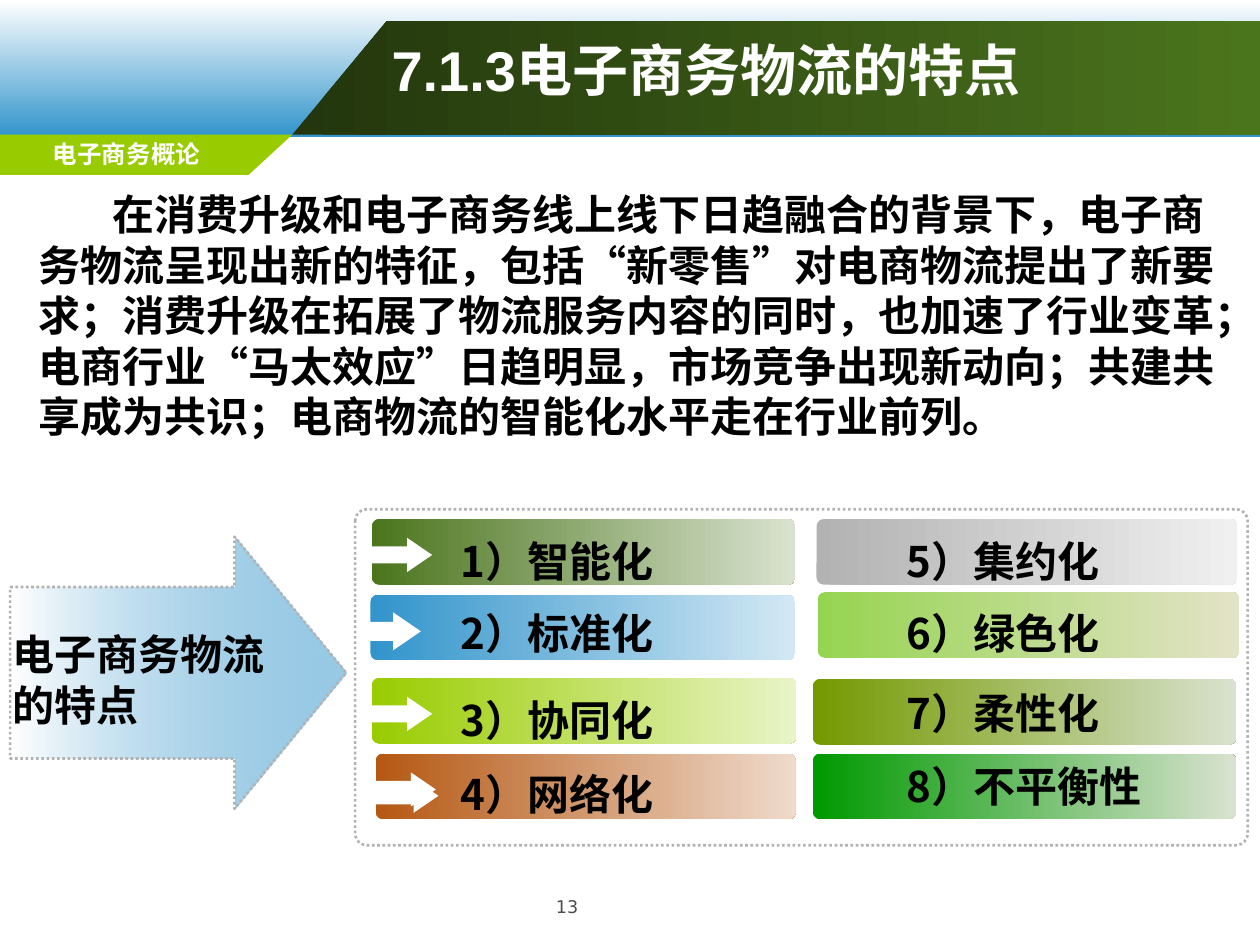
from dataclasses import dataclass

from lxml import etree
from pptx import Presentation
from pptx.dml.color import RGBColor
from pptx.enum.dml import MSO_LINE
from pptx.enum.shapes import MSO_SHAPE
from pptx.enum.text import PP_ALIGN
from pptx.oxml.ns import qn
from pptx.util import Pt

RECTANGLE = MSO_SHAPE.RECTANGLE
ROUNDED = MSO_SHAPE.ROUNDED_RECTANGLE
ARROW = MSO_SHAPE.RIGHT_ARROW
DOTTED = MSO_LINE.ROUND_DOT
LEFT, CENTER = PP_ALIGN.LEFT, PP_ALIGN.CENTER


@dataclass(frozen=True)
class Theme:
    white: str = "FFFFFF"
    black: str = "000000"
    gray: str = "4D4D4D"
    outline: str = "B2B2B2"
    blue: str = "3194CB"
    lime: str = "99CC00"
    banner: tuple = ("23360D", "4B751D")
    latin: str = "Arial"
    small_font: str = "DejaVu Sans"
    chinese: str = "Noto Sans CJK SC"
    title_size: int = 32
    body_size: int = 24
    course_size: int = 14
    number_size: int = 10


THEME = Theme()

BODY = (
    "在消费升级和电子商务线上线下日趋融合的背景下，电子商务物流呈现出新的特征，"
    "包括“新零售”对电商物流提出了新要求；消费升级在拓展了物流服务内容的同时，"
    "也加速了行业变革；电商行业“马太效应”日趋明显，市场竞争出现新动向；"
    "共建共享成为共识；电商物流的智能化水平走在行业前列。"
)

# Feature, gradient colours, bar box, label left and top
FEATURES = [
    ("1）智能化", ("4B751D", "D9E2CF"), (212.4, 296.6, 242, 37.5), (256.3, 302.4)),
    ("2）标准化", ("3194CB", "D3E8F4"), (211.7, 339.8, 242.6, 37.5), (256.3, 343.8)),
    ("3）协同化", ("99CC00", "E9F4C7"), (212.4, 387.4, 242.6, 37.5), (256.3, 393.1)),
    ("4）网络化", ("B55813", "EFDACB"), (214.6, 430.6, 240, 37.5), (256.3, 435.6)),
    ("5）集约化", ("B2B2B2", "F0F0F0"), (466.6, 296.6, 240.5, 37.5), (510.8, 302.4)),
    ("6）绿色化", ("95D450", "E3E3C7"), (467.3, 338.4, 241, 37.5), (511.2, 343.8)),
    ("7）柔性化", ("739900", "D9E2CF"), (464.4, 388, 242, 37.5), (511.2, 389.5)),
    ("8）不平衡性", ("009900", "D9E2CF"), (464.4, 430.6, 242, 37.5), (511.2, 431.3)),
]
POINTERS = [
    (208.1, 307.4, 38.9, 19.5),
    (208.1, 350, 32.4, 21.6),
    (208.1, 398.2, 38.9, 19.5),
    (210.2, 441.4, 38.9, 19.5),
    (211.7, 445, 38.9, 19.5),
]


def paint(shape, colors, angle=0, end_alpha=None):
    """Fill with one colour, a two-colour gradient, or nothing."""
    shape.shadow.inherit = False
    shape.line.fill.background()
    if colors is None:
        shape.fill.background()
    elif isinstance(colors, str):
        shape.fill.solid()
        shape.fill.fore_color.rgb = RGBColor.from_string(colors)
    else:
        shape.fill.gradient()
        shape.fill.gradient_angle = angle
        for stop, color in zip(shape.fill.gradient_stops, colors):
            stop.color.rgb = RGBColor.from_string(color)
        if end_alpha is not None:
            end_color = shape.fill._xPr.findall(".//" + qn("a:srgbClr"))[-1]
            etree.SubElement(end_color, qn("a:alpha"), val=str(end_alpha * 1000))


def add_block(page, kind, box, colors, adjustments=(), dotted=False, **fill):
    shape = page.shapes.add_shape(kind, *map(Pt, box))
    for index, value in enumerate(adjustments):
        shape.adjustments[index] = value
    paint(shape, colors, **fill)
    if dotted:
        shape.line.color.rgb = RGBColor.from_string(THEME.outline)
        shape.line.width = Pt(1.5)
        shape.line.dash_style = DOTTED


def add_outline(page, points, colors):
    builder = page.shapes.build_freeform(*points[0], scale=Pt(1))
    builder.add_line_segments(points[1:], close=True)
    paint(builder.convert_to_shape(), colors)


def add_text(page, box, text, size=THEME.body_size, font=THEME.latin,
             color=THEME.black, bold=True, align=LEFT, margin=0, indent=0):
    frame = page.shapes.add_textbox(*map(Pt, box)).text_frame
    frame.word_wrap = True
    for index, line in enumerate(text.split("\n")):
        para = frame.paragraphs[0] if index == 0 else frame.add_paragraph()
        para.alignment = align
        if margin or indent:
            properties = para._p.get_or_add_pPr()
            properties.set("marL", str(Pt(margin)))
            properties.set("indent", str(Pt(indent)))
        span = para.add_run()
        span.text = line
        span.font.size = Pt(size)
        span.font.bold = bold
        span.font.name = font
        span.font.color.rgb = RGBColor.from_string(color)
        etree.SubElement(span._r.get_or_add_rPr(), qn("a:ea"), typeface=THEME.chinese)


def add_header(page):
    add_block(page, RECTANGLE, (0, 0, 720, 78.5), (THEME.white, THEME.blue), angle=270)
    add_outline(page, [(167, 77), (720, 77), (720, 12), (221, 12)], THEME.banner)
    add_outline(page, [(0, 77), (167, 77), (142.5, 100), (0, 100)], THEME.lime)
    add_text(page, (2.9, 75.6, 139, 22.3), "电子商务概论", size=THEME.course_size,
             font=THEME.small_font, color=THEME.white, align=CENTER)
    add_text(page, (216.7, 16.6, 462, 46), "7.1.3电子商务物流的特点",
             size=THEME.title_size, color=THEME.white)


def add_features(page):
    add_block(page, ROUNDED, (203, 291, 510, 192), None, [0.035], dotted=True)
    for text, colors, bar, (left, top) in FEATURES:
        add_block(page, ROUNDED, bar, colors, [0.11])
        add_text(page, (left, top, 200, 36.5), text, font=THEME.chinese)
    for box in POINTERS:
        add_block(page, ARROW, box, THEME.white, [0.5, 0.73])


def add_topic_arrow(page):
    add_block(page, ARROW, (5.8, 306.7, 192, 155.5), (THEME.white, THEME.blue),
              [0.63, 0.41], dotted=True, end_alpha=50)
    add_text(page, (0, 355.7, 192, 65.5), "电子商务物流\n的特点", margin=9.4, indent=-9.4)


def main():
    deck = Presentation()
    deck.slide_width, deck.slide_height = Pt(720), Pt(540)
    page = deck.slides.add_slide(deck.slide_layouts[6])
    add_header(page)
    add_text(page, (15, 104.4, 690, 152.6), BODY, indent=42.5)
    add_features(page)
    add_topic_arrow(page)
    # Page number
    add_text(page, (240, 508.3, 168, 24), "13", size=THEME.number_size,
             font=THEME.small_font, color=THEME.gray, bold=False, align=CENTER)
    deck.save("out.pptx")


if __name__ == "__main__":
    main()
